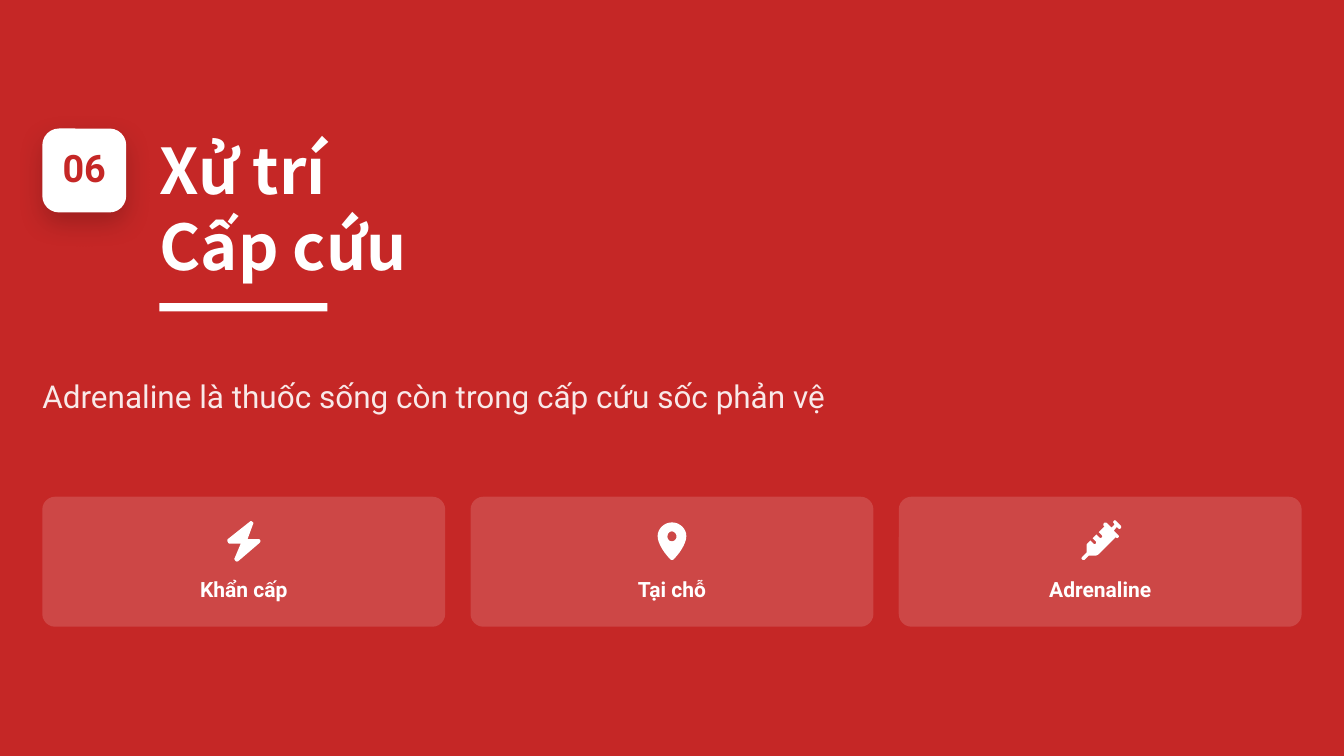
from lxml import etree
from pptx import Presentation
from pptx.dml.color import RGBColor
from pptx.enum.shapes import MSO_SHAPE
from pptx.enum.text import MSO_ANCHOR, PP_ALIGN
from pptx.oxml import parse_xml
from pptx.oxml.ns import nsdecls, qn
from pptx.util import Inches, Pt

RED = RGBColor(0xC5, 0x27, 0x26)
WHITE = RGBColor(0xFF, 0xFF, 0xFF)
LEFT, CENTER = PP_ALIGN.LEFT, PP_ALIGN.CENTER
MIDDLE = MSO_ANCHOR.MIDDLE
RECTANGLE, ROUNDED = MSO_SHAPE.RECTANGLE, MSO_SHAPE.ROUNDED_RECTANGLE
BODY_FONT, TITLE_FONT = "Roboto", "Noto Sans CJK SC"
UNITS = 1000
CURVE_STEPS = 8

BOLT = [[
    (0.33, 0), (0.35, 0.01, 0.35, 0.02, 0.34, 0.04), (0.27, 0.23), (0.41, 0.23),
    (0.42, 0.23, 0.43, 0.23, 0.44, 0.25), (0.44, 0.26, 0.44, 0.27, 0.43, 0.28),
    (0.15, 0.52), (0.14, 0.53, 0.12, 0.53, 0.11, 0.52),
    (0.1, 0.51, 0.09, 0.49, 0.1, 0.48), (0.18, 0.29), (0.03, 0.29),
    (0.02, 0.29, 0.01, 0.28, 0.01, 0.27), (0, 0.26, 0, 0.24, 0.01, 0.23),
    (0.3, 0), (0.31, -0.01, 0.32, -0.01, 0.33, 0),
]]
PIN = [
    [(0, 0.19), (0, 0.09, 0.09, 0.01, 0.19, 0.01), (0.29, 0.01, 0.38, 0.09, 0.38, 0.19),
     (0.38, 0.31, 0.26, 0.45, 0.21, 0.5), (0.2, 0.51, 0.18, 0.51, 0.17, 0.5),
     (0.12, 0.45, 0, 0.31, 0, 0.19)],
    [(0.19, 0.26), (0.22, 0.26, 0.25, 0.23, 0.25, 0.2), (0.25, 0.16, 0.22, 0.13, 0.19, 0.13),
     (0.15, 0.13, 0.13, 0.16, 0.13, 0.2), (0.13, 0.23, 0.15, 0.26, 0.19, 0.26)],
]
SYRINGE = [[
    (0.49, -0.01), (0.48, -0.02, 0.47, -0.02, 0.46, -0.01), (0.45, 0, 0.45, 0.02, 0.46, 0.02),
    (0.47, 0.04), (0.43, 0.08), (0.37, 0.02), (0.36, 0.01, 0.34, 0.01, 0.33, 0.02),
    (0.32, 0.03, 0.32, 0.05, 0.33, 0.06), (0.34, 0.06), (0.26, 0.14), (0.3, 0.18),
    (0.31, 0.19, 0.31, 0.2, 0.3, 0.21), (0.29, 0.22, 0.28, 0.22, 0.27, 0.21),
    (0.23, 0.17), (0.18, 0.22), (0.22, 0.26), (0.23, 0.27, 0.23, 0.28, 0.22, 0.29),
    (0.22, 0.3, 0.2, 0.3, 0.19, 0.29), (0.15, 0.25), (0.11, 0.29),
    (0.1, 0.3, 0.1, 0.31, 0.1, 0.33), (0.1, 0.41), (0.04, 0.47),
    (0.03, 0.48, 0.03, 0.49, 0.04, 0.5), (0.05, 0.51, 0.07, 0.51, 0.08, 0.5),
    (0.13, 0.45), (0.22, 0.45), (0.23, 0.45, 0.25, 0.44, 0.26, 0.43), (0.48, 0.21),
    (0.49, 0.21), (0.5, 0.22, 0.51, 0.22, 0.52, 0.21), (0.53, 0.2, 0.53, 0.19, 0.52, 0.18),
    (0.46, 0.12), (0.5, 0.07), (0.52, 0.09), (0.53, 0.1, 0.54, 0.1, 0.55, 0.09),
    (0.56, 0.08, 0.56, 0.06, 0.55, 0.05), (0.49, -0.01),
]]
CARDS = [("Khẩn cấp", BOLT, 0.44), ("Tại chỗ", PIN, 0.38), ("Adrenaline", SYRINGE, 0.56)]


def set_opacity(fill_element, percent):
    """Make the solid colour inside an element partly transparent."""
    color = fill_element.find(".//" + qn("a:srgbClr"))
    etree.SubElement(color, qn("a:alpha")).set("val", str(percent * 1000))


def paint(shape, opacity=100):
    """Give a shape a plain white fill without line or shadow."""
    shape.shadow.inherit = False
    shape.fill.solid()
    shape.fill.fore_color.rgb = WHITE
    shape.line.fill.background()
    if opacity < 100:
        set_opacity(shape._element.spPr.find(qn("a:solidFill")), opacity)


def add_block(slide, kind, left, top, width, height, opacity=100, radius=0):
    """Add a white rectangle, rounded when a radius is given."""
    shape = slide.shapes.add_shape(kind, Inches(left), Inches(top), Inches(width), Inches(height))
    if radius:
        shape.adjustments[0] = radius / min(width, height)
    paint(shape, opacity)
    return shape


def add_text(slide, box, text, size, color=WHITE, font=BODY_FONT, bold=True,
             align=CENTER, spacing=None, opacity=100):
    """Add a text box with one format for all its paragraphs."""
    frame = slide.shapes.add_textbox(*map(Inches, box)).text_frame
    frame.word_wrap = True
    frame.vertical_anchor = MIDDLE
    frame.margin_left = frame.margin_right = frame.margin_top = frame.margin_bottom = 0
    frame.text = text
    for paragraph in frame.paragraphs:
        paragraph.alignment = align
        if spacing:
            paragraph.line_spacing = spacing
        for run in paragraph.runs:
            run.font.size = Pt(size)
            run.font.name = font
            run.font.bold = bold
            run.font.color.rgb = color
            properties = run._r.get_or_add_rPr()
            if opacity < 100:
                set_opacity(properties, opacity)
            for tag in ("a:ea", "a:cs"):
                etree.SubElement(properties, qn(tag)).set("typeface", font)


def trace(contour):
    """Turn points and cubic curves into a list of points."""
    points = [contour[0]]
    for step in contour[1:]:
        if len(step) == 2:
            points.append(step)
            continue
        nodes = [points[-1], step[:2], step[2:4], step[4:]]
        for index in range(1, CURVE_STEPS + 1):
            t = index / CURVE_STEPS
            weights = ((1 - t) ** 3, 3 * t * (1 - t) ** 2, 3 * t * t * (1 - t), t ** 3)
            points.append(tuple(sum(w * node[axis] for w, node in zip(weights, nodes))
                                for axis in (0, 1)))
    return points


def add_icon(slide, contours, left, top):
    """Draw a white icon from its contours."""
    builder = None
    for contour in contours:
        points = [(round(x * UNITS), round(y * UNITS)) for x, y in trace(contour)]
        if builder is None:
            builder = slide.shapes.build_freeform(*points[0], scale=Inches(1) / UNITS)
        else:
            builder.move_to(*points[0])
        builder.add_line_segments(points[1:], close=True)
    paint(builder.convert_to_shape(Inches(left), Inches(top)))


def add_badge(slide, left, top, size, number):
    """Place the section number on a raised white tile."""
    tile = add_block(slide, ROUNDED, left, top, size, size, radius=0.22)
    properties = tile._element.spPr
    properties.remove(properties.find(qn("a:effectLst")))
    properties.append(parse_xml(
        f'<a:effectLst {nsdecls("a")}><a:outerShdw blurRad="{Pt(25)}" dist="{Pt(10)}" '
        'dir="5400000" algn="ctr" rotWithShape="0"><a:srgbClr val="000000">'
        '<a:alpha val="20000"/></a:srgbClr></a:outerShdw></a:effectLst>'))
    add_text(slide, (left, top, size, size), number, 36, color=RED, spacing=0.9)


def add_heading(slide, left, top, width, height):
    """Place the two-line title and its underline."""
    add_text(slide, (left, top, width, height), "Xử trí\nCấp cứu", 60,
             font=TITLE_FONT, align=LEFT)
    add_block(slide, RECTANGLE, left, top + height + 0.23, 2.22, 0.11)


def add_card(slide, left, top, width, height, label, icon, icon_width):
    """Place a translucent card with a centred icon and label."""
    add_block(slide, ROUNDED, left, top, width, height, opacity=15, radius=0.17)
    add_icon(slide, icon, left + (width - icon_width) / 2, top + 0.33)
    add_text(slide, (left + 0.26, top + 1, width - 0.52, 0.39), label, 20, spacing=1.2)


def main():
    """Build the section slide."""
    presentation = Presentation()
    presentation.slide_width, presentation.slide_height = Inches(17.78), Inches(10)
    slide = presentation.slides.add_slide(presentation.slide_layouts[6])
    slide.background.fill.solid()
    slide.background.fill.fore_color.rgb = RED
    margin, card_width, gap = 0.56, 5.33, 0.335
    add_badge(slide, margin, 1.7, 1.11, "06")
    add_heading(slide, 2.11, 1.7, 3.79, 2.08)
    add_text(slide, (margin, 4.79, 12.65, 0.68),
             "Adrenaline là thuốc sống còn trong cấp cứu sốc phản vệ", 30,
             bold=False, align=LEFT, spacing=1.4, opacity=90)
    for index, card in enumerate(CARDS):
        add_card(slide, margin + index * (card_width + gap), 6.57, card_width, 1.72, *card)
    presentation.save("out.pptx")


if __name__ == "__main__":
    main()
